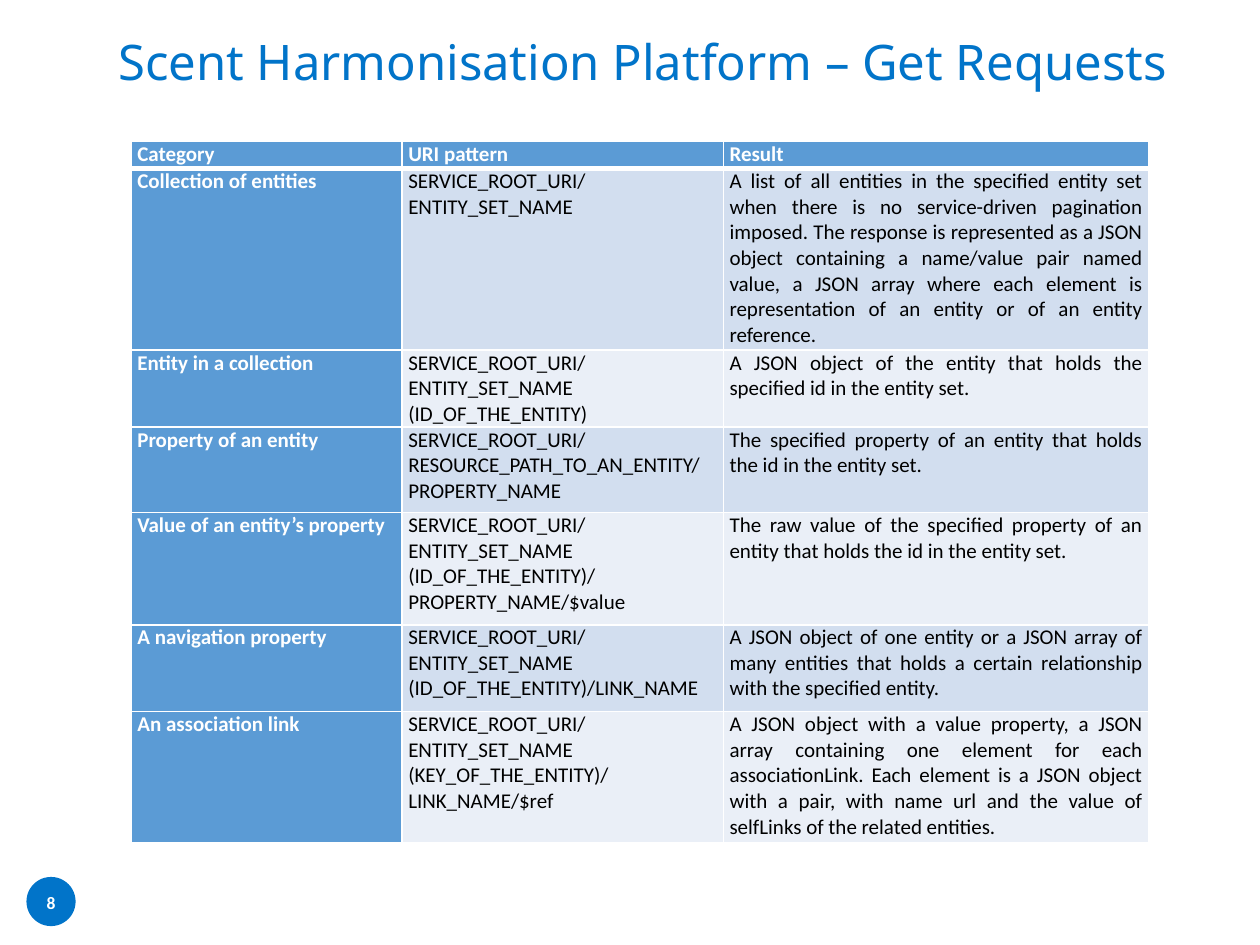
"""Build the Get Requests slide with its table of URI patterns."""
from lxml import etree
from pptx import Presentation
from pptx.dml.color import RGBColor
from pptx.enum import shapes, text
from pptx.oxml import ns
from pptx.util import Inches, Pt

BLUE, HEADER, WHITE, BLACK = "0174C9", "5B9BD5", "FFFFFF", "000000"
BANDS = ["D2DEEF", "EAEFF7"]
WIDTHS = [2.15, 2.55, 3.38]
HEIGHTS = [0.22, 1.44, 0.61, 0.68, 0.89, 0.69, 1.04]
ROOT = "SERVICE_ROOT_URI/\n"
ENTITY_SET = ROOT + "ENTITY_SET_NAME"
ROWS = [
    ("Category", "URI pattern", "Result"),
    ("Collection of entities", ENTITY_SET,
     "A list of all entities in the specified entity set when there is no "
     "service-driven pagination imposed. The response is represented as a JSON "
     "object containing a name/value pair named value, a JSON array where each "
     "element is representation of an entity or of an entity reference."),
    ("Entity in a collection", ENTITY_SET + "\n(ID_OF_THE_ENTITY)",
     "A JSON object of the entity that holds the specified id in the entity set."),
    ("Property of an entity", ROOT + "RESOURCE_PATH_TO_AN_ENTITY/\nPROPERTY_NAME",
     "The specified property of an entity that holds the id in the entity set."),
    ("Value of an entity’s property",
     ENTITY_SET + "\n(ID_OF_THE_ENTITY)/\nPROPERTY_NAME/$value",
     "The raw value of the specified property of an entity that holds the id in "
     "the entity set."),
    ("A navigation property", ENTITY_SET + "\n(ID_OF_THE_ENTITY)/LINK_NAME",
     "A JSON object of one entity or a JSON array of many entities that holds a "
     "certain relationship with the specified entity."),
    ("An association link", ENTITY_SET + "\n(KEY_OF_THE_ENTITY)/\nLINK_NAME/$ref",
     "A JSON object with a value property, a JSON array containing one element "
     "for each associationLink. Each element is a JSON object with a pair, with "
     "name url and the value of selfLinks of the related entities."),
]


def rgb(value):
    return RGBColor.from_string(value)


def write(tf, content, size, font, color, bold, align):
    tf.text = content
    for p in tf.paragraphs:
        p.alignment = align
        for r in p.runs:
            r.font.size, r.font.name, r.font.bold = Pt(size), font, bold
            r.font.color.rgb = rgb(color)


prs = Presentation()
prs.slide_width, prs.slide_height = Inches(10), Inches(7.5)
s = prs.slides.add_slide(prs.slide_layouts[6])

badge = s.shapes.add_shape(shapes.MSO_SHAPE.OVAL, Inches(0.21), Inches(6.96),
                           Inches(0.39), Inches(0.39))
badge.shadow.inherit = False
badge.fill.solid()
badge.fill.fore_color.rgb = rgb(BLUE)
badge.line.fill.background()

number = s.shapes.add_textbox(Inches(0.21), Inches(6.96), Inches(0.39), Inches(0.4))
tf = number.text_frame
tf.margin_left = tf.margin_right = 0
tf.word_wrap = True
tf.vertical_anchor = text.MSO_ANCHOR.MIDDLE
write(tf, "8", 10, "Calibri", WHITE, True, text.PP_ALIGN.CENTER)

title = s.shapes.add_textbox(Inches(0.84), Inches(0.19), Inches(8.62), Inches(0.65))
tf = title.text_frame
tf.word_wrap = True
tf.vertical_anchor = text.MSO_ANCHOR.MIDDLE
write(tf, "Scent Harmonisation Platform – Get Requests", 28, "Noto Sans", BLUE,
      False, text.PP_ALIGN.LEFT)
tf.paragraphs[0].line_spacing = 0.9

table = s.shapes.add_table(len(ROWS), len(WIDTHS), Inches(1.04), Inches(1.12),
                           Inches(sum(WIDTHS)), Inches(sum(HEIGHTS))).table
for column, width in zip(table.columns, WIDTHS):
    column.width = Inches(width)
for row, height in zip(table.rows, HEIGHTS):
    row.height = Inches(height)

for i, row in enumerate(ROWS):
    for j, content in enumerate(row):
        cell = table.cell(i, j)
        heading = i == 0 or j == 0
        cell.margin_left = cell.margin_right = Inches(0.05)
        cell.margin_top = cell.margin_bottom = 0
        write(cell.text_frame, content, 12, "Calibri", WHITE if heading else BLACK,
              heading, text.PP_ALIGN.JUSTIFY)
        tcPr = cell._tc.get_or_add_tcPr()
        for side in "LRTB":
            thick = (i, side) in [(0, "B"), (1, "T")]
            ln = etree.SubElement(tcPr, ns.qn("a:ln" + side), w=str(Pt(3 if thick else 1)))
            fill = etree.SubElement(ln, ns.qn("a:solidFill"))
            etree.SubElement(fill, ns.qn("a:srgbClr"), val=WHITE)
        cell.fill.solid()
        cell.fill.fore_color.rgb = rgb(HEADER if heading else BANDS[(i - 1) % 2])

prs.save("out.pptx")
